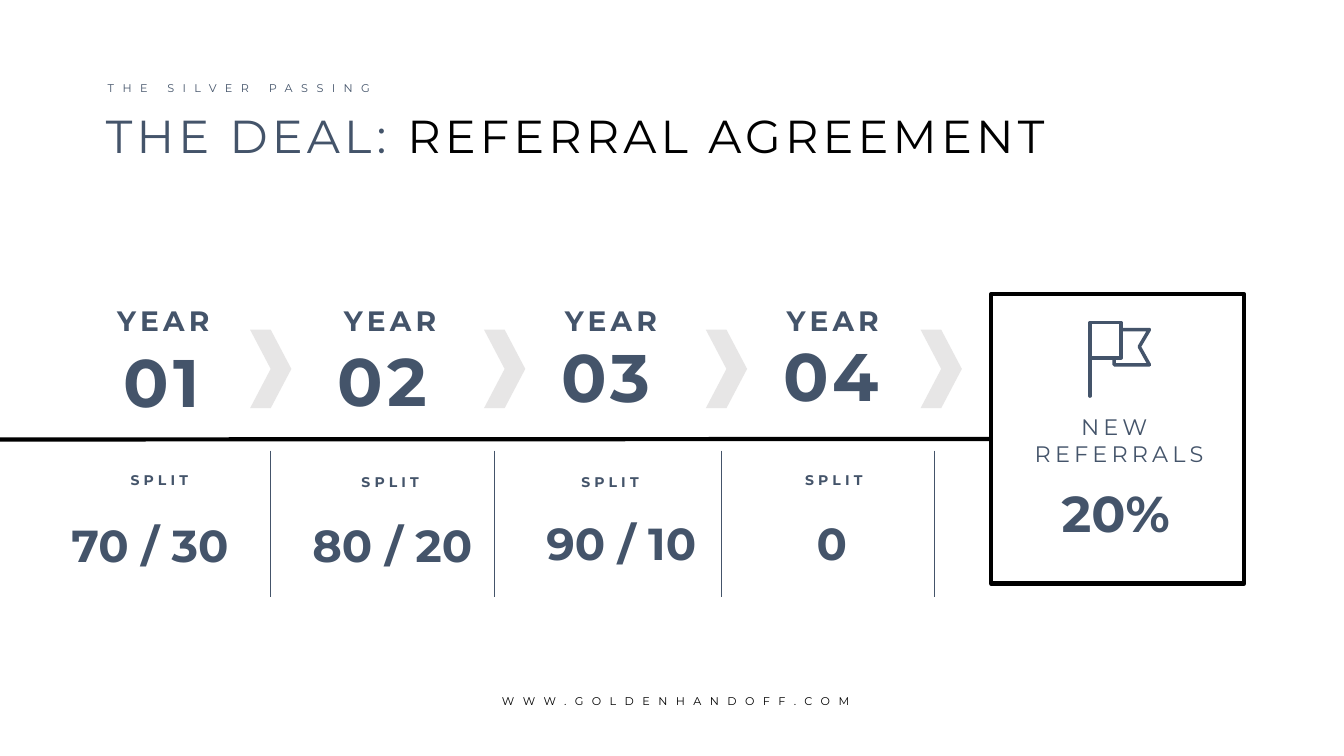
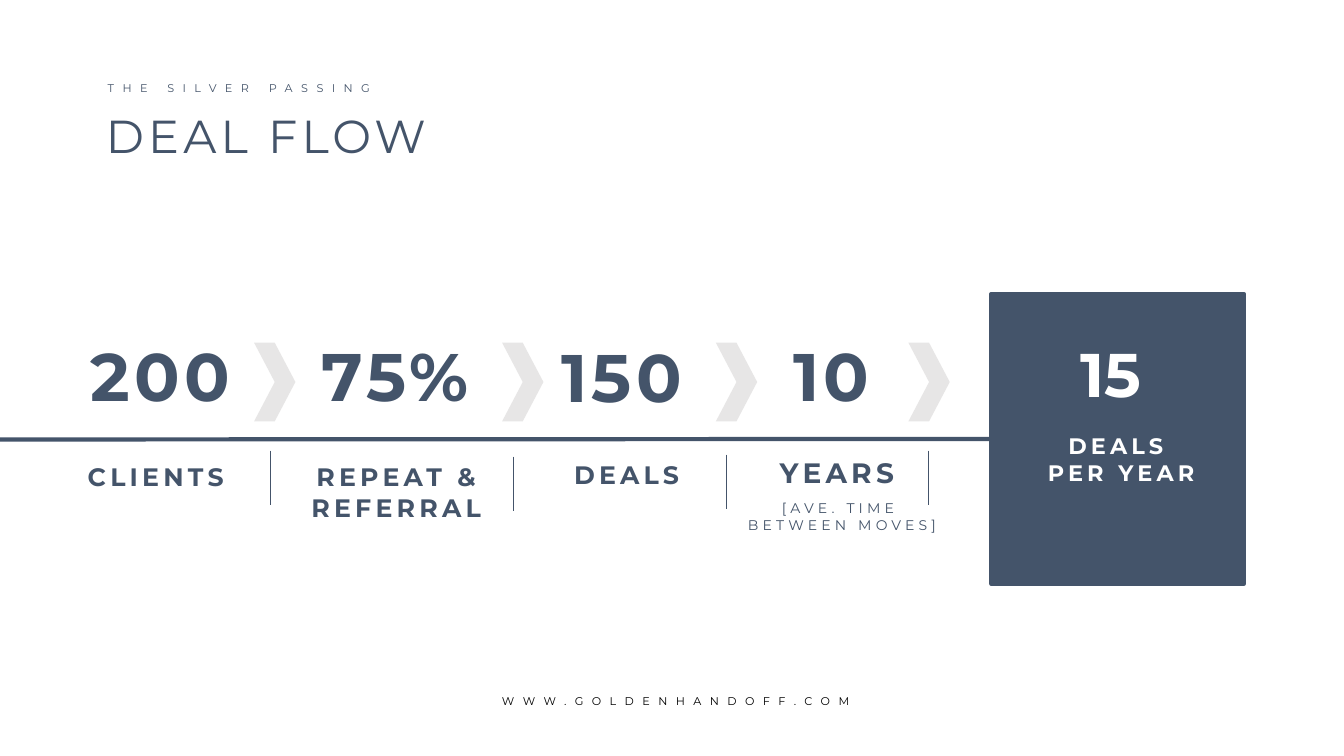
from dataclasses import dataclass

from lxml import etree
from pptx import Presentation
from pptx import util as u
from pptx.dml.color import RGBColor
from pptx.enum import shapes, text
from pptx.oxml.ns import qn

Inches, Pt = u.Inches, u.Pt


@dataclass(frozen=True)
class Theme:
    font: str = "Montserrat"
    # Colours
    slate: str = "44546A"
    black: str = "000000"
    white: str = "FFFFFF"
    grey: str = "E7E6E6"
    # Type sizes, in points
    title: int = 33
    small: int = 8
    note: int = 10
    caption: int = 16
    label: int = 18
    heading: int = 20
    share: int = 32
    percent: int = 36
    result: int = 44
    number: int = 48
    # Letter spacing, in points
    spaced: int = 3
    wide: int = 6
    # Line widths, in points
    heavy: float = 3
    medium: float = 2.5
    thin: float = 0.5


T = Theme()


def rgb(color):
    return RGBColor.from_string(color)


class Deck:
    """Holds the presentation, the current slide and the style."""

    def __init__(self):
        self.prs = Presentation()
        self.prs.slide_width = Inches(13.33)
        self.prs.slide_height = Inches(7.5)
        self.s = None

    # Slide frame: title, line above it, footer
    def slide(self, *title_runs):
        self.s = self.prs.slides.add_slide(self.prs.slide_layouts[5])
        sp = self.s.shapes.title
        sp.left, sp.top, sp.width, sp.height = map(Inches, (0.95, 1.01, 10.2, 0.66))
        tf = sp.text_frame
        tf.vertical_anchor = text.MSO_ANCHOR.TOP
        tf.auto_size = text.MSO_AUTO_SIZE.NONE
        p = tf.paragraphs[0]
        p.alignment = text.PP_ALIGN.LEFT
        for words, color in title_runs:
            self.run(p, words, T.title, color, False, T.spaced)
        self.text("THE SILVER PASSING", 0.97, 0.76, 3.43, 0.24, T.small,
                  bold=False, spacing=T.wide, wrap=True)
        self.text("WWW.GOLDENHANDOFF.COM", 4.88, 6.84, 3.88, 0.24, T.small,
                  T.black, bold=False, spacing=T.wide, wrap=True)

    # Text
    def run(self, p, words, size, color, bold, spacing):
        r = p.add_run()
        r.text = words
        r.font.name, r.font.size, r.font.bold = T.font, Pt(size), bold
        r.font.color.rgb = rgb(color)
        if spacing:
            r._r.get_or_add_rPr().set("spc", str(spacing * 100))

    def text(self, words, x, y, w, h, size, color=T.slate, bold=True,
             spacing=T.spaced, center=False, wrap=False):
        sp = self.s.shapes.add_textbox(*map(Inches, (x, y, w, h)))
        tf = sp.text_frame
        tf.word_wrap = wrap
        tf.auto_size = text.MSO_AUTO_SIZE.SHAPE_TO_FIT_TEXT
        for i, line in enumerate(words.split("\n")):
            p = tf.add_paragraph() if i else tf.paragraphs[0]
            p.alignment = text.PP_ALIGN.CENTER if center else text.PP_ALIGN.LEFT
            self.run(p, line, size, color, bold, spacing)

    def figure(self, words, x, y, w, h, size, color=T.slate):
        self.text(words, x, y, w, h, size, color, spacing=0, wrap=True)

    # Shapes
    def shape(self, kind, x, y, w, h, fill, line=None):
        sp = self.s.shapes.add_shape(kind, *map(Inches, (x, y, w, h)))
        sp.shadow.inherit = False
        sp.fill.solid()
        sp.fill.fore_color.rgb = rgb(fill)
        if line:
            sp.line.color.rgb = rgb(line)
            sp.line.width = Pt(T.heavy)
        else:
            sp.line.fill.background()
        return sp

    def chevrons(self, y, lefts):
        for x in lefts:
            self.shape(shapes.MSO_SHAPE.CHEVRON, x, y, 0.41, 0.78, T.grey)

    def flag(self):
        pole = [(10.81, 3.93), (10.81, 3.2), (11.12, 3.2), (11.12, 3.55), (10.81, 3.55)]
        tail = [(11.12, 3.27), (11.4, 3.27), (11.3, 3.44), (11.4, 3.62),
                (11.05, 3.62), (11.05, 3.55)]
        pole, tail = [[(Inches(x), Inches(y)) for x, y in part] for part in (pole, tail)]
        fb = self.s.shapes.build_freeform(*pole[0])
        fb.add_line_segments(pole[1:], close=False)
        fb.move_to(*tail[0])
        fb.add_line_segments(tail[1:], close=False)
        sp = fb.convert_to_shape()
        sp.shadow.inherit = False
        sp.fill.background()
        sp.line.color.rgb = rgb(T.slate)
        sp.line.width = Pt(T.medium)
        ln = sp._element.spPr.find(qn("a:ln"))
        ln.set("cap", "rnd")
        etree.SubElement(ln, qn("a:round"))

    # Lines
    def line(self, x1, y1, x2, y2, color, width):
        c = self.s.shapes.add_connector(shapes.MSO_CONNECTOR.STRAIGHT,
                                        *map(Inches, (x1, y1, x2, y2)))
        c.line.color.rgb = rgb(color)
        c.line.width = Pt(width)
        etree.SubElement(c._element.spPr, qn("a:effectLst"))
        return c

    def divider(self, x, y, length):
        self.line(x, y, x, y + length, T.slate, T.thin)

    # Timeline that runs from the slide edge into the result box
    def timeline(self, color, fill):
        box = self.shape(shapes.MSO_SHAPE.RECTANGLE, 9.83, 2.92, 2.51, 2.87, fill, color)
        self.line(0, 4.36, 9.83, 4.36, color, T.heavy).end_connect(box, 1)


def referral_agreement(d):
    d.slide(("THE DEAL: ", T.slate), ("REFERRAL AGREEMENT", T.black))
    d.timeline(T.black, T.white)

    # Years
    for x in (1.04, 3.29, 5.48, 7.68):
        d.text("YEAR", x, 2.96, 1.16, 0.44, T.heading, center=True)
    for words, x, y, w in (("01", 1.13, 3.33, 1.04), ("02", 3.25, 3.32, 1.16),
                           ("03", 5.47, 3.28, 1.13), ("04", 7.67, 3.27, 1.19)):
        d.text(words, x, y, w, 0.91, T.number)
    d.chevrons(3.27, (2.48, 4.8, 7, 9.13))

    # Splits
    for x, y in ((1.18, 4.63), (3.47, 4.65), (5.65, 4.65), (7.87, 4.63)):
        d.text("SPLIT", x, y, 0.8, 0.27, T.note, center=True)
    for words, x, y, w in (("70 / 30", 0.61, 5.09, 2.08), ("80 / 20", 3, 5.09, 2.08),
                           ("90 / 10", 5.32, 5.07, 2.08), ("0", 8, 5.07, 0.85)):
        d.figure(words, x, y, w, 0.64, T.share)
    for x in (2.68, 4.9, 7.15, 9.27):
        d.divider(x, 4.47, 1.45)

    # Result box
    d.flag()
    d.text("NEW \nREFERRALS", 10.14, 4.05, 1.92, 0.64, T.caption, bold=False, center=True)
    d.figure("20%", 10.43, 4.73, 1.71, 0.71, T.percent)


def deal_flow(d):
    d.slide(("DEAL FLOW", T.slate))
    d.timeline(T.slate, T.slate)

    # Numbers
    for words, x, y, w in (("200", 0.8, 3.27, 1.68), ("75%", 3.09, 3.27, 1.82),
                           ("150", 5.47, 3.28, 1.48), ("10", 7.77, 3.27, 1.04)):
        d.text(words, x, y, w, 0.91, T.number)
    d.chevrons(3.4, (2.52, 4.98, 7.1, 9.01))

    # Labels
    for words, x, y, w, h, size in (("CLIENTS", 0.76, 4.53, 1.57, 0.4, T.label),
                                    ("REPEAT &\nREFERRAL", 2.98, 4.53, 1.9, 0.71, T.label),
                                    ("DEALS", 5.58, 4.51, 1.27, 0.4, T.label),
                                    ("YEARS", 7.61, 4.47, 1.38, 0.44, T.heading)):
        d.text(words, x, y, w, h, size, center=True)
    d.text("[AVE. TIME \nBETWEEN MOVES]", 7.29, 4.91, 2.12, 0.44, T.note,
           bold=False, center=True)
    for x, y in ((2.68, 4.47), (5.09, 4.53), (7.2, 4.51), (9.21, 4.47)):
        d.divider(x, y, 0.54)

    # Result box
    d.figure("15", 10.62, 3.28, 1.71, 0.84, T.result, T.white)
    d.text("DEALS \nPER YEAR", 10.27, 4.24, 1.7, 0.64, T.caption, T.white, center=True)


def main():
    d = Deck()
    referral_agreement(d)
    deal_flow(d)
    d.prs.save("out.pptx")


if __name__ == "__main__":
    main()
